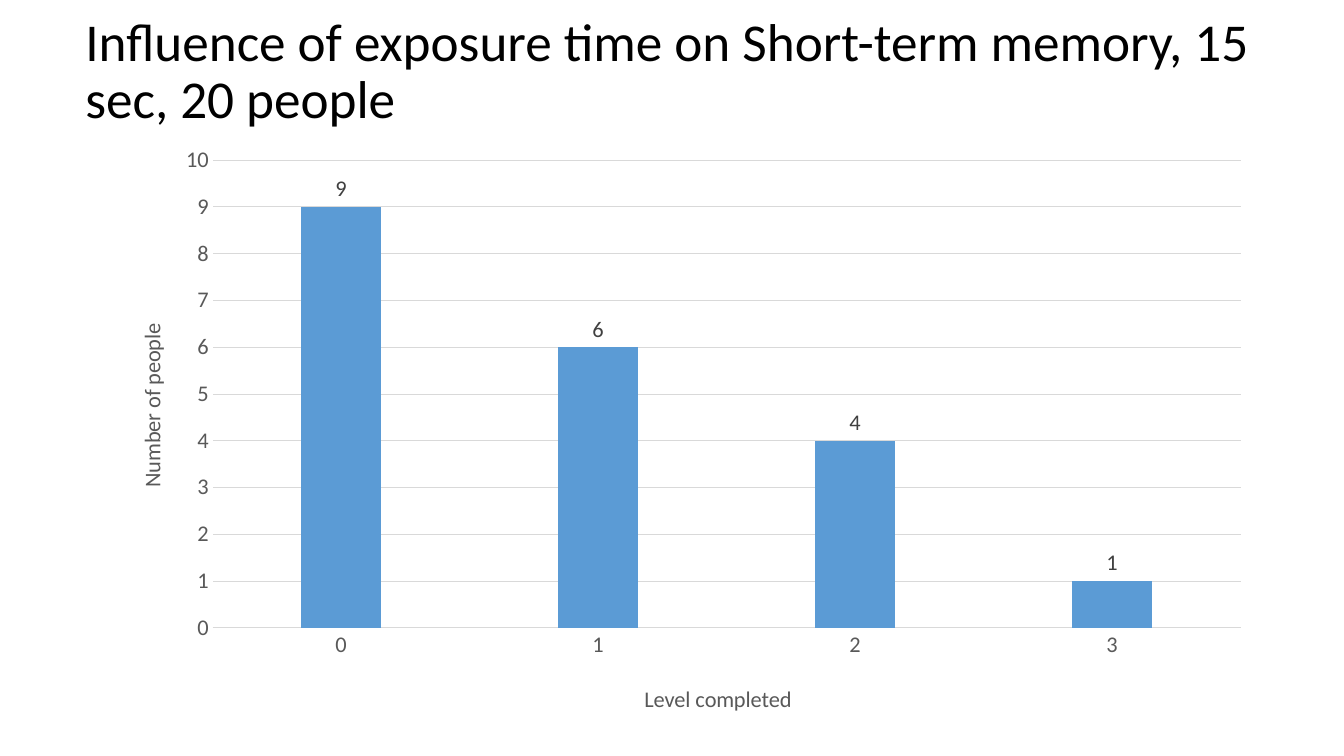
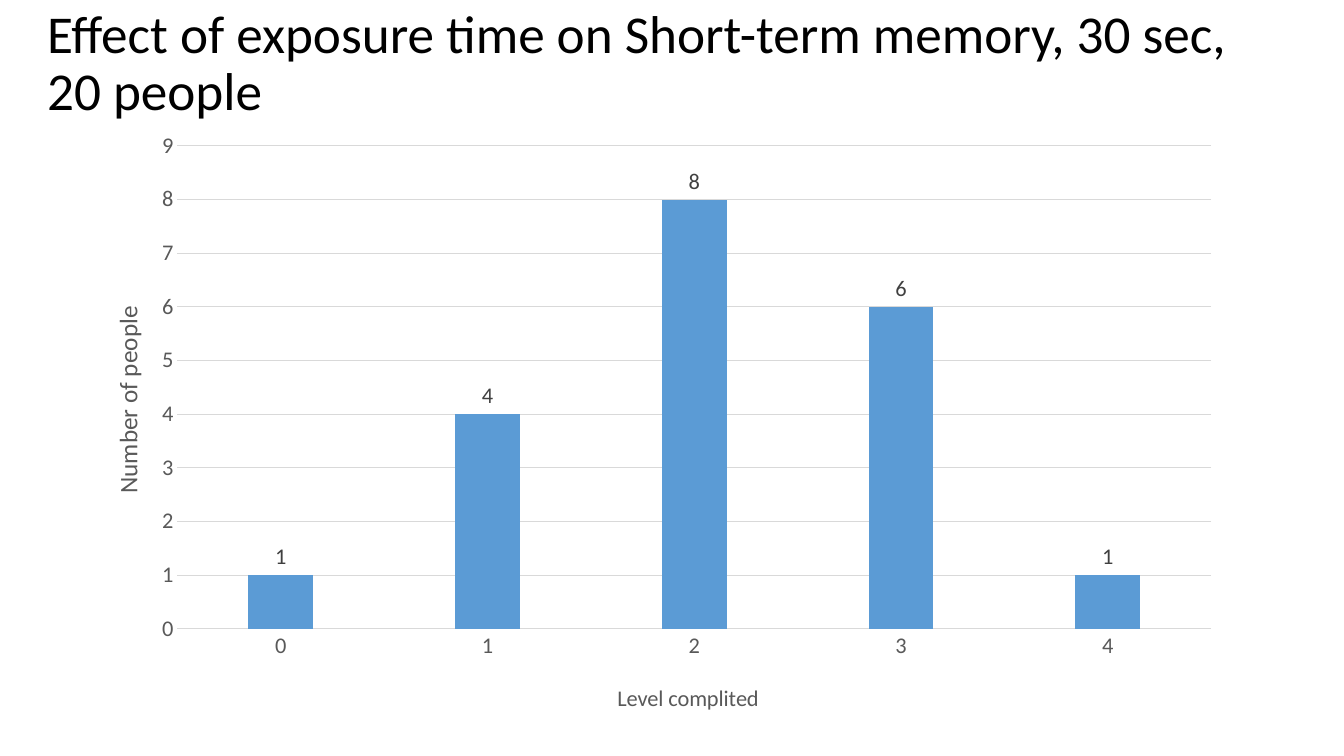
from pptx import Presentation
from pptx.chart.data import CategoryChartData
from pptx.dml.color import RGBColor
from pptx.enum.chart import XL_CHART_TYPE, XL_LABEL_POSITION, XL_TICK_MARK
from pptx.enum.text import MSO_ANCHOR
from pptx.oxml.ns import qn
from pptx.util import Cm, Pt
from lxml.etree import Element, SubElement

FONT = "Calibri"
HUES = {"page": "FFFFFF", "title": "000000", "axis": "595959",
        "grid": "D9D9D9", "bar": "5B9BD5", "label": "404040"}


def hue(name):
    return RGBColor.from_string(HUES[name])


def style(font, size, name):
    font.name = FONT
    font.size = Pt(size)
    font.bold = False
    font.color.rgb = hue(name)


def rule(line):
    line.color.rgb = hue("grid")
    line.width = Pt(0.75)


def place(node, index, box, inner=False):
    tag = qn("c:layout")
    old = node.find(tag)
    if old is not None:
        node.remove(old)
    layout = Element(tag)
    manual = SubElement(layout, qn("c:manualLayout"))
    if inner:
        SubElement(manual, qn("c:layoutTarget")).set("val", "inner")
    for mode in ("xMode", "yMode"):
        SubElement(manual, qn("c:" + mode)).set("val", "edge")
    for key, share in zip("xywh", box):
        SubElement(manual, qn("c:" + key)).set("val", str(share / 100))
    node.insert(index, layout)


def add_title(slide, text, left, top):
    box = slide.shapes.add_textbox(Cm(left), Cm(top), Cm(30.68), Cm(3.68))
    frame = box.text_frame
    frame.word_wrap = True
    frame.vertical_anchor = MSO_ANCHOR.MIDDLE
    para = frame.paragraphs[0]
    para.line_spacing = 0.9
    run = para.add_run()
    run.text = text
    style(run.font, 38, "title")


def set_axis(axis, text, size, spot, turn=0):
    axis.major_tick_mark = XL_TICK_MARK.NONE
    axis.minor_tick_mark = XL_TICK_MARK.NONE
    style(axis.tick_labels.font, 16, "axis")
    title = axis.axis_title
    run = title.text_frame.paragraphs[0].add_run()
    run.text = text
    style(run.font, size, "axis")
    for body in title.element.iter(qn("a:bodyPr")):
        body.set("rot", str(turn * 60000))
        body.set("vert", "horz")
    place(title.element, 1, spot)


def add_bars(slide, box, values, top, plot, level, people):
    data = CategoryChartData()
    data.categories = [str(n) for n in range(len(values))]
    data.add_series("Series 1", values)
    chart = slide.shapes.add_chart(
        XL_CHART_TYPE.COLUMN_CLUSTERED, *map(Cm, box), data).chart
    style(chart.font, 16, "title")
    chart.has_legend = False
    chart.has_title = False
    place(chart.element.find(".//" + qn("c:plotArea")), 0, plot, inner=True)

    bars = chart.plots[0]
    bars.gap_width = 219
    bars.overlap = -27
    bars.vary_by_categories = False
    fill = bars.series[0].format.fill
    fill.solid()
    fill.fore_color.rgb = hue("bar")
    bars.has_data_labels = True
    labels = bars.data_labels
    labels.show_value = True
    labels.position = XL_LABEL_POSITION.OUTSIDE_END
    style(labels.font, 16, "label")

    set_axis(chart.category_axis, *level)
    rule(chart.category_axis.format.line)
    count = chart.value_axis
    set_axis(count, *people, turn=-90)
    count.format.line.fill.background()
    count.has_major_gridlines = True
    rule(count.major_gridlines.format.line)
    count.minimum_scale = 0
    count.maximum_scale = top
    count.major_unit = 1


def add_page(deck):
    slide = deck.slides.add_slide(deck.slide_layouts[6])
    fill = slide.background.fill
    fill.solid()
    fill.fore_color.rgb = hue("page")
    return slide


def main():
    deck = Presentation()
    deck.slide_width = Cm(33.87)
    deck.slide_height = Cm(19.05)

    slide = add_page(deck)
    add_title(slide, "Influence of exposure time on Short-term memory, "
              "15 sec, 20 people", 1.9, 0)
    add_bars(slide, (2.64, 3.38, 29.21, 14.96), (9, 6, 4, 1), 10,
             (9.3, 4.4, 88.7, 78.8),
             ("Level completed", 16, (46.2, 92)),
             ("Number of people", 16, (2.4, 31.2)))

    slide = add_page(deck)
    add_title(slide, "Effect of exposure time on Short-term memory, "
              "30 sec, 20 people", 0.94, -0.2)
    add_bars(slide, (1.9, 3.02, 29.21, 15.29), (1, 4, 8, 6, 1), 9,
             (8.8, 4.3, 89.2, 79.6),
             ("Level complited", 16, (46.4, 92.2)),
             ("Number of people", 18, (2.6, 30)))

    deck.save("out.pptx")


if __name__ == "__main__":
    main()
